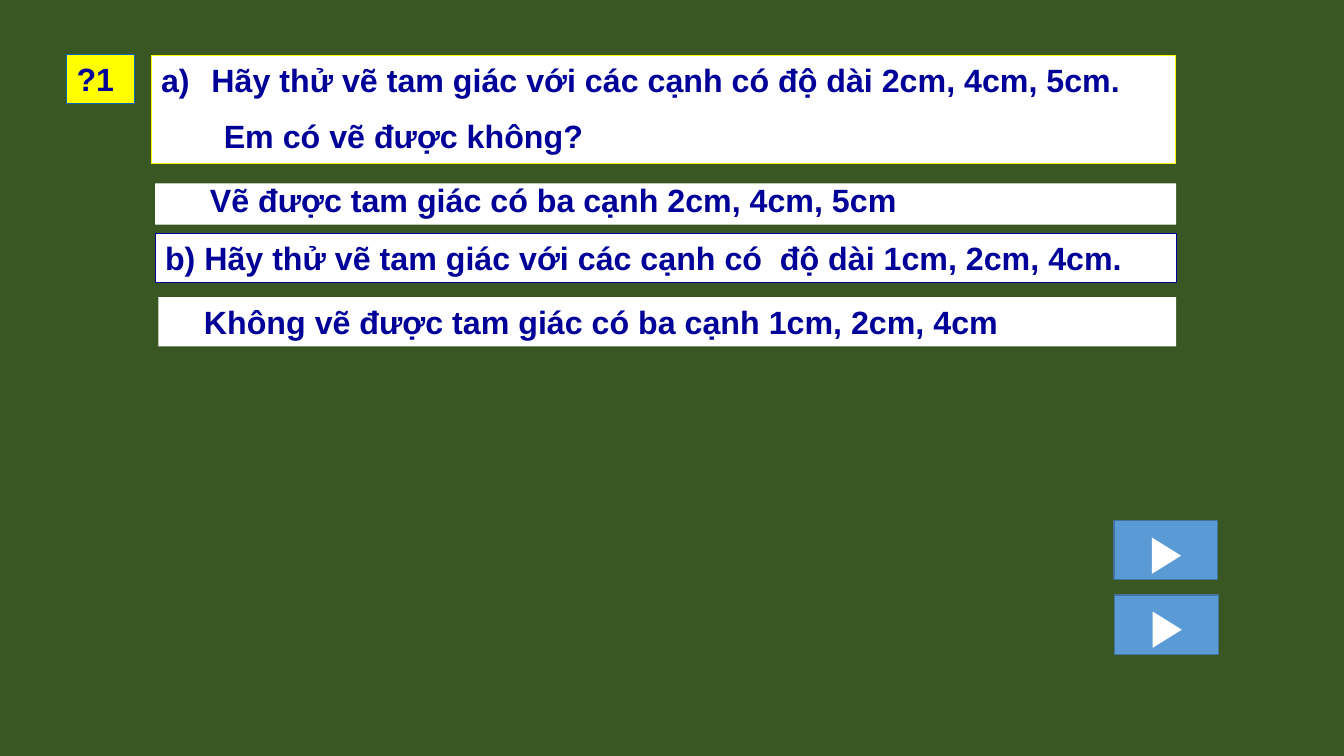
from dataclasses import dataclass

import pptx
import pptx.dml.color
import pptx.enum.shapes
import pptx.enum.text
import pptx.oxml.ns
import pptx.shapes.autoshape
import pptx.slide
import pptx.text.text
import pptx.util
from lxml import etree
from pptx.dml.color import RGBColor
from pptx.enum.text import MSO_ANCHOR, PP_ALIGN
from pptx.util import Cm, Pt

BOARD_GREEN = RGBColor(0x38, 0x57, 0x23)
WHITE = RGBColor(0xFF, 0xFF, 0xFF)
YELLOW = RGBColor(0xFF, 0xFF, 0x00)
INK_BLUE = RGBColor(0x00, 0x00, 0x99)
LABEL_BLUE = RGBColor(0x05, 0x63, 0xC1)
BUTTON_BLUE = RGBColor(0x5B, 0x9B, 0xD5)
BUTTON_EDGE = RGBColor(0x43, 0x73, 0x9E)


@dataclass(frozen=True)
class Line:
    text: str
    margin: float = 0
    align: PP_ALIGN = PP_ALIGN.LEFT
    spacing: float = 1.0
    space_before: float = 0
    lettered: bool = False


@dataclass(frozen=True)
class Panel:
    left: float
    top: float
    width: float
    height: float
    lines: tuple[Line, ...]
    fill: RGBColor = WHITE
    edge: RGBColor | None = None


@dataclass(frozen=True)
class Button:
    left: float
    top: float


# Question label, questions and answers, lengths in centimetres
PANELS = (
    Panel(3.91, 4.62, 25.73, 1.04,
          (Line("Vẽ được tam giác có ba cạnh 2cm, 4cm, 5cm", margin=1.13, spacing=0.8),)),
    Panel(3.81, 1.4, 25.81, 2.72,
          (Line("Hãy thử vẽ tam giác với các cạnh có độ dài 2cm, 4cm, 5cm.",
                margin=1.27, align=PP_ALIGN.JUSTIFY, lettered=True),
           Line("Em có vẽ được không?", margin=1.58, align=PP_ALIGN.JUSTIFY, space_before=12)),
          edge=YELLOW),
    Panel(1.68, 1.37, 1.7, 1.24, (Line("?1"),), fill=YELLOW, edge=LABEL_BLUE),
    Panel(3.91, 5.89, 25.73, 1.24,
          (Line("b) Hãy thử vẽ tam giác với các cạnh có  độ dài 1cm, 2cm, 4cm.",
                align=PP_ALIGN.JUSTIFY),),
          edge=INK_BLUE),
    Panel(3.99, 7.49, 25.65, 1.24,
          (Line("Không vẽ được tam giác có ba cạnh 1cm, 2cm, 4cm", margin=0.9),)),
)
BUTTONS = (Button(28.07, 13.11), Button(28.09, 14.99))


def add_box(page: pptx.slide.Slide, left: float, top: float, width: float, height: float, *,
            fill: RGBColor, edge: RGBColor | None, edge_width: float,
            anchor: MSO_ANCHOR) -> pptx.shapes.autoshape.Shape:
    box = page.shapes.add_shape(pptx.enum.shapes.MSO_SHAPE.RECTANGLE,
                                Cm(left), Cm(top), Cm(width), Cm(height))
    box.shadow.inherit = False
    box.fill.solid()
    box.fill.fore_color.rgb = fill
    if edge is None:
        box.line.fill.background()
    else:
        box.line.color.rgb = edge
        box.line.width = Pt(edge_width)
    box.text_frame.word_wrap = True
    box.text_frame.vertical_anchor = anchor
    return box


def write(para: pptx.text.text._Paragraph, text: str, *, font: str, size: float,
          color: RGBColor, bold: bool, align: PP_ALIGN) -> None:
    para.alignment = align
    span = para.add_run()
    span.text = text
    span.font.name = font
    span.font.size = Pt(size)
    span.font.bold = bold
    span.font.color.rgb = color


def indent(para: pptx.text.text._Paragraph, margin: float, lettered: bool) -> None:
    properties = para._p.get_or_add_pPr()
    properties.set("marL", str(Cm(margin)))
    properties.set("indent", str(-Cm(margin) if lettered else 0))
    if lettered:
        etree.SubElement(properties, pptx.oxml.ns.qn("a:buAutoNum"), type="alphaLcParenR")


def draw_panel(page: pptx.slide.Slide, panel: Panel) -> None:
    box = add_box(page, panel.left, panel.top, panel.width, panel.height, fill=panel.fill,
                  edge=panel.edge, edge_width=0.75, anchor=MSO_ANCHOR.TOP)
    for index, line in enumerate(panel.lines):
        para = box.text_frame.add_paragraph() if index else box.text_frame.paragraphs[0]
        para.line_spacing = line.spacing
        para.space_before = Pt(line.space_before)
        indent(para, line.margin, line.lettered)
        write(para, line.text, font="Arial", size=23, color=INK_BLUE, bold=True,
              align=line.align)


def draw_button(page: pptx.slide.Slide, button: Button) -> None:
    box = add_box(page, button.left, button.top, 2.62, 1.5, fill=BUTTON_BLUE,
                  edge=BUTTON_EDGE, edge_width=1, anchor=MSO_ANCHOR.MIDDLE)
    write(box.text_frame.paragraphs[0], "▶", font="Calibri", size=36, color=WHITE,
          bold=False, align=PP_ALIGN.CENTER)


def main() -> None:
    deck = pptx.Presentation()
    deck.slide_width, deck.slide_height = Cm(33.87), Cm(19.05)
    page = deck.slides.add_slide(deck.slide_layouts.get_by_name("Blank"))
    page.background.fill.solid()
    page.background.fill.fore_color.rgb = BOARD_GREEN

    for panel in PANELS:
        draw_panel(page, panel)

    # Play buttons
    for button in BUTTONS:
        draw_button(page, button)

    deck.save("out.pptx")


if __name__ == "__main__":
    main()
